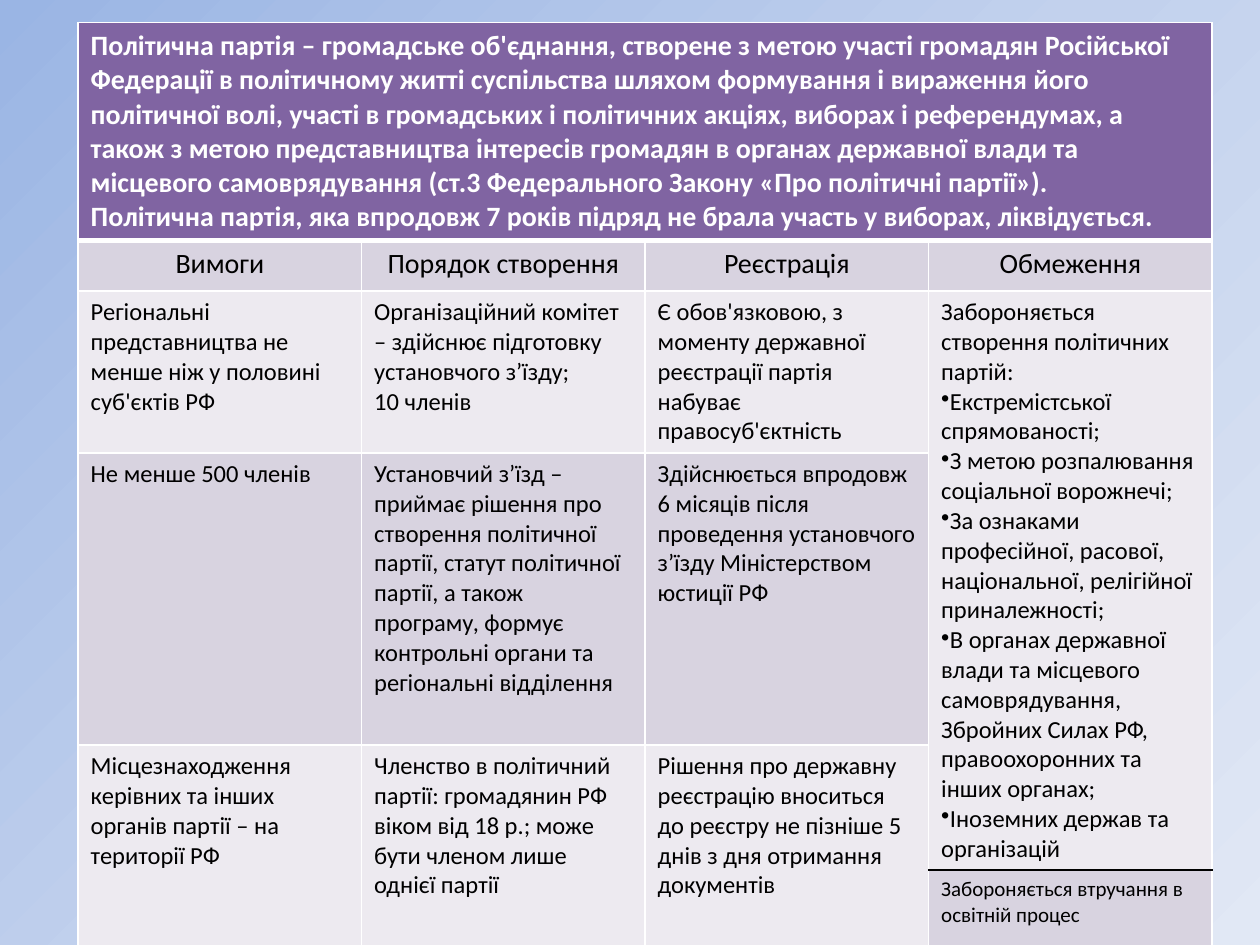
from copy import deepcopy

from lxml import etree
from pptx import Presentation
from pptx.dml.color import RGBColor
from pptx.enum.text import PP_ALIGN
from pptx.oxml.ns import qn
from pptx.util import Inches, Pt

CENTER, LEFT = PP_ALIGN.CENTER, PP_ALIGN.LEFT
COLORS = {
    "sky_dark": "9AB5E4", "sky_mid": "C2D1ED", "sky_light": "E1E8F5",
    "purple": "8064A2", "band_dark": "D8D3E0", "band_light": "EDEAF0",
    "white": "FFFFFF", "black": "000000",
}
BULLET = "•"


def color(name):
    return RGBColor.from_string(COLORS[name])


def add_border(cell, side, name, points):
    line = etree.SubElement(cell._tc.get_or_add_tcPr(), qn("a:ln" + side), w=str(Pt(points)))
    fill = etree.SubElement(line, qn("a:solidFill"))
    etree.SubElement(fill, qn("a:srgbClr"), val=COLORS[name])


prs = Presentation()
prs.slide_width, prs.slide_height = Inches(10), Inches(7.5)
slide = prs.slides.add_slide(prs.slide_layouts[6])

# Background: three-stop diagonal gradient
slide.background.fill.gradient()
slide.background.fill.gradient_angle = 315
stop_list = slide._element.find(".//" + qn("a:gsLst"))
stop_list.insert(1, deepcopy(stop_list[0]))
sky = [(0, "sky_dark"), (0.5, "sky_mid"), (1, "sky_light")]
for stop, (position, name) in zip(slide.background.fill.gradient_stops, sky):
    stop.position = position
    stop.color.rgb = color(name)

# Wording by row and column; a leading bullet marks a list item
definition = (
    "Політична партія – громадське об'єднання, створене з метою участі громадян Російської "
    "Федерації в політичному житті суспільства шляхом формування і вираження його політичної "
    "волі, участі в громадських і політичних акціях, виборах і референдумах, а також з метою "
    "представництва інтересів громадян в органах державної влади та місцевого самоврядування "
    "(ст.3 Федерального Закону «Про політичні партії»).\n"
    "Політична партія, яка впродовж 7 років підряд не брала участь у виборах, ліквідується."
)
restrictions = "\n".join([
    "Забороняється створення політичних партій:",
    "•Екстремістської спрямованості;",
    "•З метою розпалювання соціальної ворожнечі;",
    "•За ознаками професійної, расової, національної, релігійної приналежності;",
    "•В органах державної влади та місцевого самоврядування, Збройних Силах РФ, "
    "правоохоронних та інших органах;",
    "•Іноземних держав та організацій",
])
rows = [
    [definition, "", "", ""],
    ["Вимоги", "Порядок створення", "Реєстрація", "Обмеження"],
    ["Регіональні представництва не менше ніж у половині суб'єктів РФ",
     "Організаційний комітет – здійснює підготовку установчого з’їзду;\n10 членів",
     "Є обов'язковою, з моменту державної реєстрації партія набуває правосуб'єктність",
     restrictions],
    ["Не менше 500 членів",
     "Установчий з’їзд – приймає рішення про створення політичної партії, статут політичної "
     "партії, а також програму, формує контрольні органи та регіональні відділення",
     "Здійснюється впродовж 6 місяців після проведення установчого з’їзду Міністерством "
     "юстиції РФ", ""],
    ["Місцезнаходження керівних та інших органів партії – на території РФ",
     "Членство в політичний партії: громадянин РФ віком від 18 р.; може бути членом лише "
     "однієї партії",
     "Рішення про державну реєстрацію вноситься до реєстру не пізніше 5 днів з дня отримання "
     "документів", ""],
    ["", "", "", "Забороняється втручання в освітній процес"],
]
row_heights = [1.71, 0.4, 1.24, 2.32, 0.87, 0.68]
row_fills = ["purple", "band_dark", "band_light", "band_dark", "band_light", "band_dark"]
row_sizes = [16, 16, 14, 14, 14, 12]

# Table grid and merged areas
party_table = slide.shapes.add_table(
    6, 4, Inches(0.62), Inches(0.18), Inches(9), Inches(sum(row_heights))).table
party_table.first_row = party_table.horz_banding = False
for column in party_table.columns:
    column.width = Inches(2.25)
for row, height in zip(party_table.rows, row_heights):
    row.height = Inches(height)
merges = [((0, 0), (0, 3)), ((2, 3), (4, 3))] + [((4, c), (5, c)) for c in range(3)]
for first, last in merges:
    party_table.cell(*first).merge(party_table.cell(*last))

# Cells: borders, fill, then text
for r, row_texts in enumerate(rows):
    for c, text in enumerate(row_texts):
        cell = party_table.cell(r, c)
        borders = {side: ("white", 1) for side in "LRTB"}
        if r == 0:
            borders["B"] = ("white", 3)
        if r == 1:
            borders["T"] = ("white", 3)
        if c == 3 and r in (2, 4):
            borders["B"] = ("black", 1)
        if c == 3 and r == 5:
            borders["T"] = ("black", 1)
        for side, (name, points) in borders.items():
            add_border(cell, side, name, points)

        cell.fill.solid()
        merged_light = r == 5 and c < 3 or c == 3 and r in (3, 4)
        cell.fill.fore_color.rgb = color("band_light" if merged_light else row_fills[r])

        cell.text_frame.text = text.replace(BULLET, "")
        for paragraph, wording in zip(cell.text_frame.paragraphs, text.split("\n")):
            paragraph.alignment = CENTER if r == 1 else LEFT
            if wording.startswith(BULLET):
                etree.SubElement(paragraph._p.get_or_add_pPr(), qn("a:buChar"), char=BULLET)
            paragraph.font.size = Pt(row_sizes[r])
            for run in paragraph.runs:
                run.font.name = "Calibri"
                run.font.size = Pt(row_sizes[r])
                run.font.bold = r == 0
                run.font.color.rgb = color("white" if r == 0 else "black")

prs.save("out.pptx")
